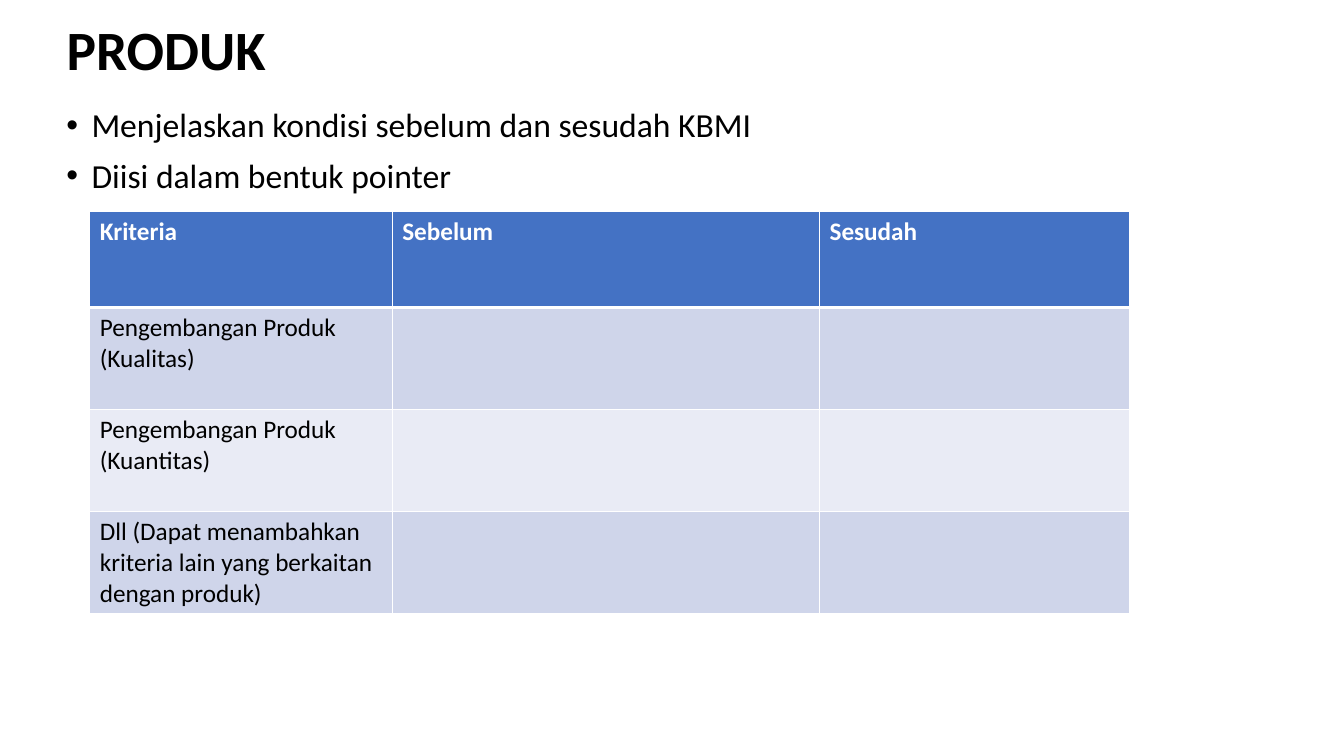
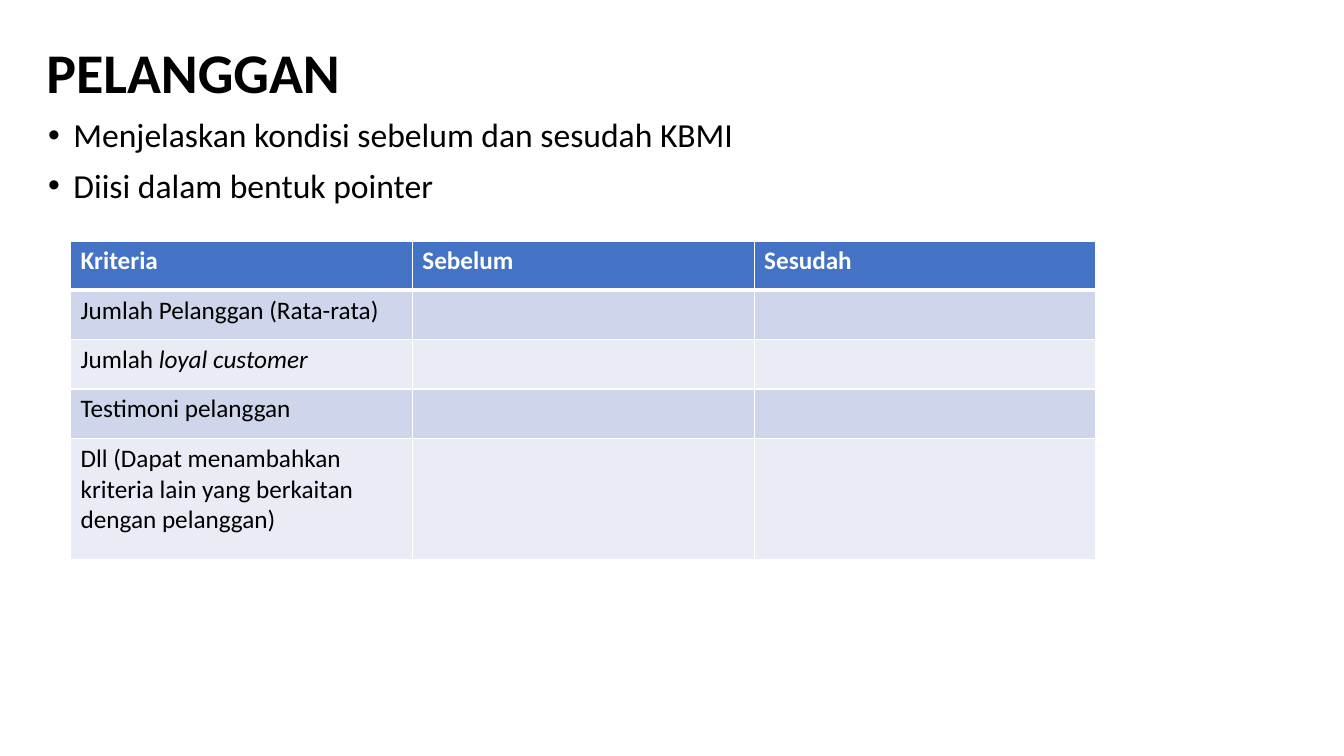
from dataclasses import dataclass

from lxml.etree import SubElement
from pptx import Presentation
from pptx.dml.color import RGBColor
from pptx.enum.text import MSO_ANCHOR, MSO_AUTO_SIZE, PP_ALIGN
from pptx.oxml.ns import qn
from pptx.util import Inches, Pt

FONT = "Calibri"
BLACK = RGBColor(0x00, 0x00, 0x00)
WHITE = RGBColor(0xFF, 0xFF, 0xFF)
HEADER_BLUE = RGBColor(0x44, 0x72, 0xC4)
BANDS = (RGBColor(0xCF, 0xD5, 0xEA), RGBColor(0xE9, 0xEB, 0xF5))

SLIDE_WIDTH = Inches(13.33)
SLIDE_HEIGHT = Inches(7.5)
BULLET_SIZE = 24
CELL_SIZE = 18
BULLET_INDENT = Inches(0.25)
THIN, THICK = Pt(1), Pt(3)

HEADINGS = ("Kriteria", "Sebelum", "Sesudah")
BULLETS = (
    "Menjelaskan kondisi sebelum dan sesudah KBMI",
    "Diisi dalam bentuk pointer",
)


@dataclass(frozen=True)
class Frame:
    left: float
    top: float
    width: float
    height: float


@dataclass(frozen=True)
class Words:
    text: str
    italic: bool = False


@dataclass(frozen=True)
class CriteriaPage:
    title: str
    title_size: float
    title_frame: Frame
    bullet_frame: Frame
    table_left: float
    table_top: float
    columns: tuple[float, ...]
    rows: tuple[float, ...]
    criteria: tuple[tuple[Words, ...], ...]


PAGES = (
    CriteriaPage(
        title="PRODUK",
        title_size=39.6,
        title_frame=Frame(4.2, 3.33, 61.35, 7.2),
        bullet_frame=Frame(4.2, 13.73, 90.1, 75.07),
        table_left=6.68,
        table_top=28,
        columns=(22.5, 31.8, 23.1),
        rows=(12.67,) + (13.5,) * 3,
        criteria=(
            (Words("Pengembangan Produk (Kualitas)"),),
            (Words("Pengembangan Produk (Kuantitas)"),),
            (Words("Dll (Dapat menambahkan kriteria lain yang berkaitan dengan produk)"),),
        ),
    ),
    CriteriaPage(
        title="PELANGGAN",
        title_size=40,
        title_frame=Frame(2.7, 0.27, 86.25, 19.33),
        bullet_frame=Frame(2.85, 15.07, 86.25, 13.73),
        table_left=5.25,
        table_top=31.87,
        columns=(25.43,) * 3,
        rows=(6.53,) * 4 + (16,),
        criteria=(
            (Words("Jumlah Pelanggan (Rata-rata)"),),
            (Words("Jumlah "), Words("loyal customer", italic=True)),
            (Words("Testimoni pelanggan"),),
            (Words("Dll (Dapat menambahkan kriteria lain yang berkaitan dengan pelanggan)"),),
        ),
    ),
)


def across(share: float) -> int:
    return round(SLIDE_WIDTH * share / 100)


def down(share: float) -> int:
    return round(SLIDE_HEIGHT * share / 100)


def place(frame: Frame) -> tuple[int, int, int, int]:
    return across(frame.left), down(frame.top), across(frame.width), down(frame.height)


def add_span(para, words: Words, size: float, color: RGBColor, bold: bool = False) -> None:
    span = para.add_run()
    span.text = words.text
    span.font.name = FONT
    span.font.size = Pt(size)
    span.font.color.rgb = color
    span.font.bold = bold
    span.font.italic = words.italic


def add_title(page, content: CriteriaPage) -> None:
    title = page.shapes.title
    title.left, title.top, title.width, title.height = place(content.title_frame)
    title.text_frame.auto_size = MSO_AUTO_SIZE.NONE
    title.text_frame.vertical_anchor = MSO_ANCHOR.MIDDLE
    para = title.text_frame.paragraphs[0]
    para.alignment = PP_ALIGN.LEFT
    para.line_spacing = 0.9
    add_span(para, Words(content.title), content.title_size, BLACK, bold=True)


def add_bullets(page, frame: Frame) -> None:
    box = page.shapes.add_textbox(*place(frame))
    box.text_frame.word_wrap = True
    for index, text in enumerate(BULLETS):
        para = box.text_frame.add_paragraph() if index else box.text_frame.paragraphs[0]
        para.line_spacing = 0.9
        para.space_before = Pt(10)
        properties = para._p.get_or_add_pPr()
        properties.set("marL", str(BULLET_INDENT))
        properties.set("indent", str(-BULLET_INDENT))
        SubElement(properties, qn("a:buFont"), typeface="Arial")
        SubElement(properties, qn("a:buChar"), char="•")
        add_span(para, Words(text), BULLET_SIZE, BLACK)


def style_cell(cell, fill: RGBColor, top: int, bottom: int) -> None:
    properties = cell._tc.get_or_add_tcPr()
    for side, width in (("lnL", THIN), ("lnR", THIN), ("lnT", top), ("lnB", bottom)):
        line = SubElement(properties, qn(f"a:{side}"), w=str(width))
        paint = SubElement(line, qn("a:solidFill"))
        SubElement(paint, qn("a:srgbClr"), val=str(WHITE))
    cell.fill.solid()
    cell.fill.fore_color.rgb = fill


def add_criteria_table(page, content: CriteriaPage) -> None:
    frame = Frame(content.table_left, content.table_top, sum(content.columns), sum(content.rows))
    table = page.shapes.add_table(len(content.rows), len(content.columns), *place(frame)).table
    for column, share in zip(table.columns, content.columns):
        column.width = across(share)
    for row, share in zip(table.rows, content.rows):
        row.height = down(share)

    for cell, heading in zip(table.rows[0].cells, HEADINGS):
        style_cell(cell, HEADER_BLUE, THIN, THICK)
        add_span(cell.text_frame.paragraphs[0], Words(heading), CELL_SIZE, WHITE, bold=True)

    for index, criterion in enumerate(content.criteria):
        for cell in table.rows[index + 1].cells:
            style_cell(cell, BANDS[index % 2], THIN if index else THICK, THIN)
        para = table.cell(index + 1, 0).text_frame.paragraphs[0]
        for words in criterion:
            add_span(para, words, CELL_SIZE, BLACK)


def main() -> None:
    deck = Presentation()
    deck.slide_width = SLIDE_WIDTH
    deck.slide_height = SLIDE_HEIGHT
    title_only = deck.slide_layouts.get_by_name("Title Only")
    for content in PAGES:
        page = deck.slides.add_slide(title_only)
        add_title(page, content)
        add_bullets(page, content.bullet_frame)
        add_criteria_table(page, content)
    deck.save("out.pptx")


if __name__ == "__main__":
    main()
